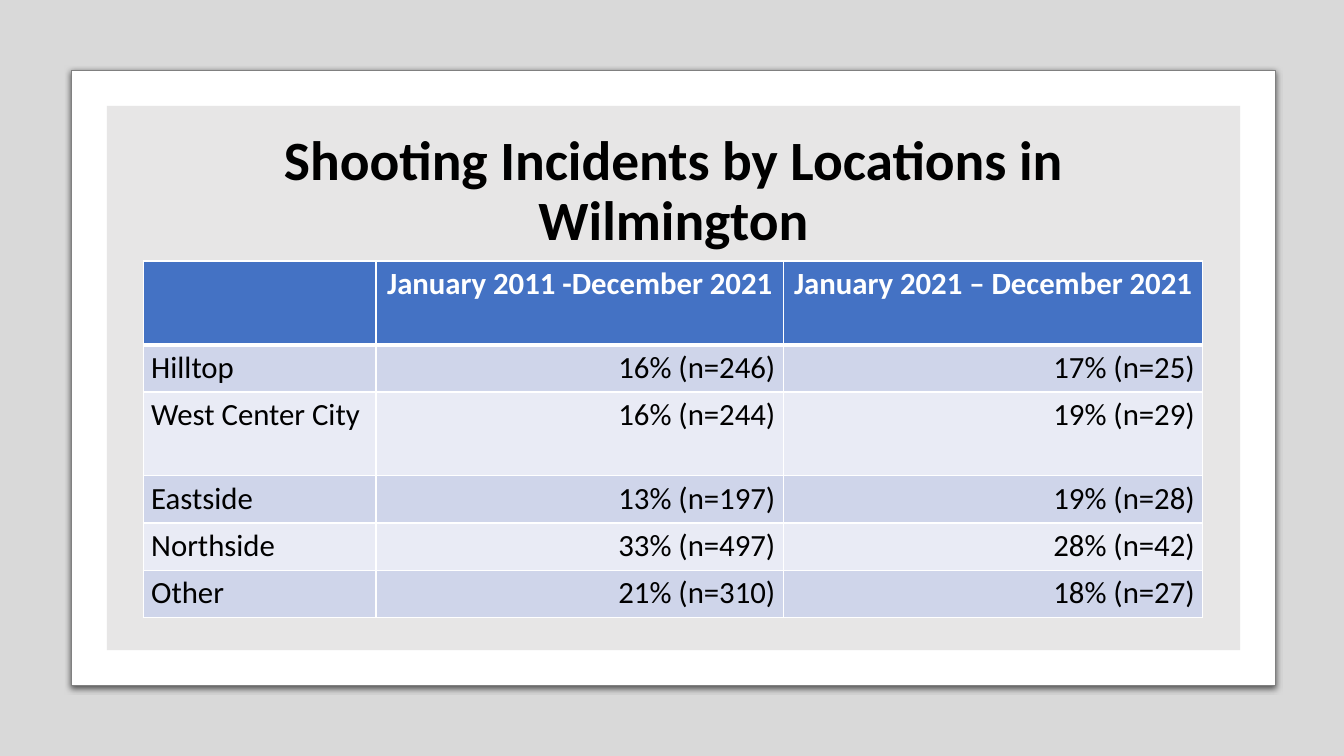
"""Build a slide with a table of shooting incidents by location."""
from lxml.etree import SubElement
from pptx import Presentation
from pptx.dml.color import RGBColor
from pptx.enum.shapes import MSO_SHAPE
from pptx.enum.text import MSO_ANCHOR, MSO_AUTO_SIZE, PP_ALIGN
from pptx.oxml import parse_xml
from pptx.oxml.ns import nsdecls, qn
from pptx.util import Pt

TITLE = "Shooting Incidents by Locations in Wilmington"
ROWS = [
    ("", "January 2011 -December 2021", "January 2021 – December 2021"),
    ("Hilltop", "16% (n=246)", "17% (n=25)"),
    ("West Center City", "16% (n=244)", "19% (n=29)"),
    ("Eastside", "13% (n=197)", "19% (n=28)"),
    ("Northside", "33% (n=497)", "28% (n=42)"),
    ("Other", "21% (n=310)", "18% (n=27)"),
]
WIDE = (231, 404, 416)
HIGH = (83, 47, 83, 47, 47, 47)
SIZE = (1333, 750)
CARD = (71, 70, 1194, 610)
PANEL = (106, 105, 1124, 540)
HEAD = (141, 140, 1054, 102)
GRID = (142, 259)
THEME = {
    "font": "Calibri", "title": 39.6, "body": 22,
    "ink": "000000", "paper": "FFFFFF", "edge": "808080", "panel": "E7E6E6",
    "head": "4472C4", "bands": ("E9EBF5", "CFD5EA"),
}
SHADOW = (
    f'<a:effectLst {nsdecls("a")}>'
    '<a:outerShdw blurRad="57150" dist="19050" dir="5400000" algn="ctr" rotWithShape="0">'
    '<a:srgbClr val="000000"><a:alpha val="63000"/></a:srgbClr>'
    '</a:outerShdw></a:effectLst>'
)


def px(num):
    return num * 9144


def tint(fill, code):
    fill.solid()
    fill.fore_color.rgb = RGBColor.from_string(code)


def put(item, form):
    for name, value in form.items():
        setattr(item, name, value)


def style(para, size, code, bold, align):
    para.alignment = align
    put(para.font, {"name": THEME["font"], "size": Pt(size), "bold": bold})
    para.font.color.rgb = RGBColor.from_string(code)


def block(slide, kind, box, code):
    shape = slide.shapes.add_shape(kind, *map(px, box))
    shape.shadow.inherit = False
    tint(shape.fill, code)
    shape.line.fill.background()
    return shape


def border(cell, row):
    props = cell._tc.get_or_add_tcPr()
    thick = {"lnT": 3 if row == 1 else 1, "lnB": 3 if row == 0 else 1}
    for side in ("lnL", "lnR", "lnT", "lnB"):
        line = SubElement(props, qn(f"a:{side}"), w=str(Pt(thick.get(side, 1))))
        fill = SubElement(line, qn("a:solidFill"))
        SubElement(fill, qn("a:srgbClr"), val=THEME["paper"])


def frame(slide):
    back = block(slide, MSO_SHAPE.RECTANGLE, (0, 0, *SIZE), THEME["ink"])
    color = back.element.spPr.find(qn("a:solidFill"))[0]
    SubElement(color, qn("a:alpha"), val="15000")
    card = block(slide, MSO_SHAPE.ROUNDED_RECTANGLE, CARD, THEME["paper"])
    card.adjustments[0] = 0
    tint(card.line.fill, THEME["edge"])
    card.line.width = Pt(0.75)
    props = card.element.spPr
    props.replace(props.find(qn("a:effectLst")), parse_xml(SHADOW))
    return block(slide, MSO_SHAPE.RECTANGLE, PANEL, THEME["panel"])


def head(slide, panel):
    title = slide.shapes.title
    put(title, dict(zip(("left", "top", "width", "height"), map(px, HEAD))))
    text = title.text_frame
    put(text, {"text": TITLE, "word_wrap": True, "auto_size": MSO_AUTO_SIZE.NONE,
               "vertical_anchor": MSO_ANCHOR.MIDDLE})
    para = text.paragraphs[0]
    para.line_spacing = 0.9
    style(para, THEME["title"], THEME["ink"], True, PP_ALIGN.CENTER)
    panel.element.addnext(title.element)


def grid(slide):
    box = map(px, (*GRID, sum(WIDE), sum(HIGH)))
    table = slide.shapes.add_table(len(ROWS), len(WIDE), *box).table
    for col, wide in zip(table.columns, WIDE):
        col.width = px(wide)
    for row, (line, high) in enumerate(zip(ROWS, HIGH)):
        table.rows[row].height = px(high)
        top = row == 0
        for col, words in enumerate(line):
            cell = table.cell(row, col)
            border(cell, row)
            tint(cell.fill, THEME["head"] if top else THEME["bands"][row % 2])
            put(cell, {"text": words, "margin_left": px(8), "margin_right": px(8),
                       "margin_top": px(4), "margin_bottom": px(4)})
            align = PP_ALIGN.CENTER if top else PP_ALIGN.RIGHT if col else PP_ALIGN.LEFT
            code = THEME["paper" if top else "ink"]
            style(cell.text_frame.paragraphs[0], THEME["body"], code, top, align)


def main():
    deck = Presentation()
    put(deck, dict(zip(("slide_width", "slide_height"), map(px, SIZE))))
    slide = deck.slides.add_slide(deck.slide_layouts[5])
    head(slide, frame(slide))
    grid(slide)
    deck.save("out.pptx")


if __name__ == "__main__":
    main()
